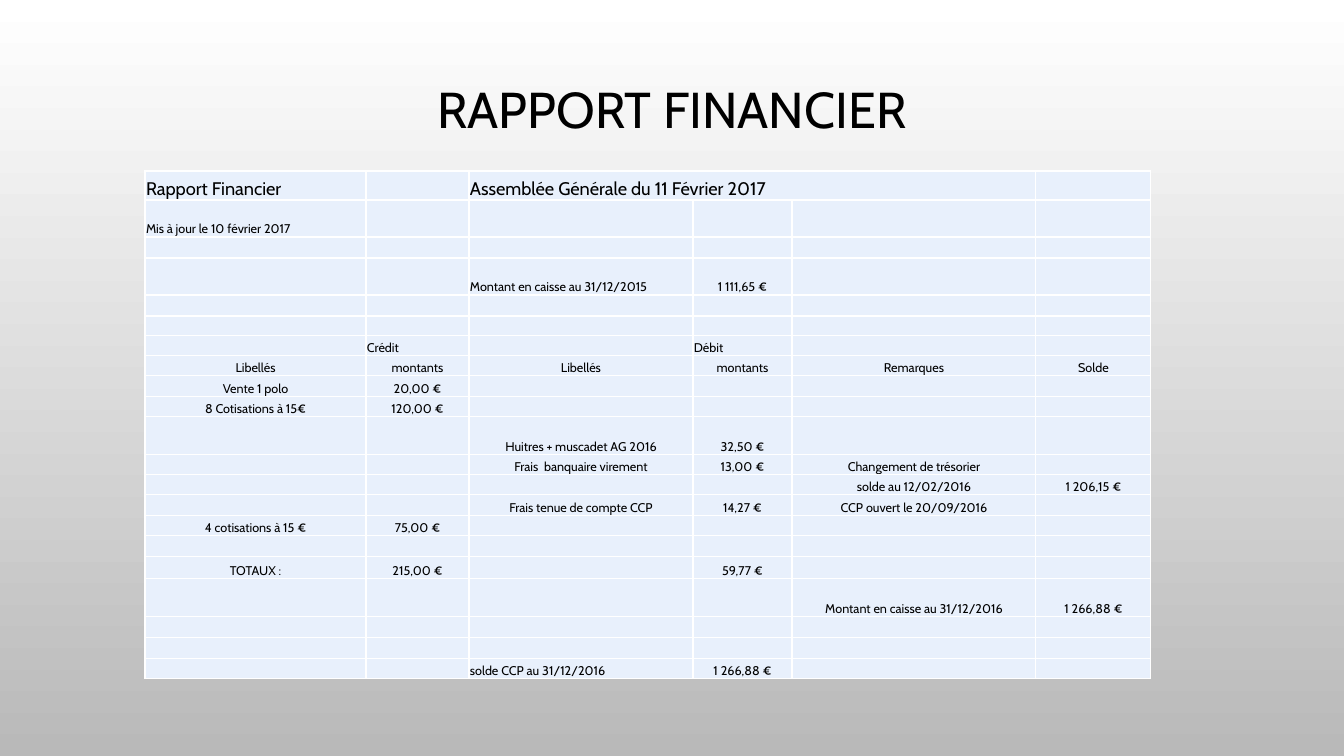
"""Build the financial report slide."""
from lxml import etree
from pptx import Presentation
from pptx.dml.color import RGBColor
from pptx.enum.text import MSO_ANCHOR, PP_ALIGN
from pptx.oxml.ns import qn
from pptx.util import Pt

LEFT, CENTER = PP_ALIGN.LEFT, PP_ALIGN.CENTER
MIDDLE, BOTTOM = MSO_ANCHOR.MIDDLE, MSO_ANCHOR.BOTTOM
SCALE = 12192000 / 1344
FONT = "Cabin"
BLACK = RGBColor(0x00, 0x00, 0x00)
WHITE = RGBColor(0xFF, 0xFF, 0xFF)
GRAY = RGBColor(0xB9, 0xB9, 0xB9)
PALE_BLUE = RGBColor(0xE8, 0xF0, 0xFC)

COLUMN_WIDTHS = [221, 103, 224, 99, 244, 115]
ROW_HEIGHTS = [29, 37, 21, 37, 21, 20, 20, 20, 21, 20, 38,
               20, 20, 21, 20, 21, 22, 38, 21, 21, 20]
LEFT_ROWS = {0, 1, 3, 6, 20}
REPORT = {
    0: ["Rapport Financier", "", "Assemblée Générale du 11 Février 2017"],
    1: ["Mis à jour le 10 février 2017"],
    3: ["", "", "Montant en caisse au 31/12/2015", "1 111,65 €"],
    6: ["", "Crédit", "", "Débit"],
    7: ["Libellés", "montants", "Libellés", "montants", "Remarques", "Solde"],
    8: ["Vente 1 polo", "20,00 €"],
    9: ["8 Cotisations à 15€", "120,00 €"],
    10: ["", "", "Huitres + muscadet AG 2016", "32,50 €"],
    11: ["", "", "Frais  banquaire virement", "13,00 €", "Changement de trésorier"],
    12: ["", "", "", "", "solde au 12/02/2016", "1 206,15 €"],
    13: ["", "", "Frais tenue de compte CCP", "14,27 €", "CCP ouvert le 20/09/2016"],
    14: ["4 cotisations à 15 €", "75,00 €"],
    16: ["TOTAUX :", "215,00 €", "", "59,77 €"],
    17: ["", "", "", "", "Montant en caisse au 31/12/2016", "1 266,88 €"],
    20: ["", "", "solde CCP au 31/12/2016", "1 266,88 €"],
}


def px(length):
    """Turn pixels into EMU."""
    return round(length * SCALE)


def set_values(target, values):
    """Set each attribute in values on the target."""
    for name, value in values.items():
        setattr(target, name, value)


def write_text(paragraph, text, size, alignment):
    """Write one run, or fix the line height of an empty paragraph."""
    paragraph.alignment = alignment
    if not text:
        end = etree.SubElement(paragraph._p, qn("a:endParaRPr"))
        end.set("sz", str(size * 100))
        etree.SubElement(end, qn("a:latin")).set("typeface", FONT)
        return
    run = paragraph.add_run()
    run.text = text
    set_values(run.font, {"name": FONT, "size": Pt(size)})
    run.font.color.rgb = BLACK


def paint_background(slide):
    """Fill the slide with a gradient from top to bottom."""
    fill = slide.background.fill
    fill.gradient()
    fill.gradient_angle = 270
    for stop, color in zip(fill.gradient_stops, (WHITE, GRAY)):
        stop.color.rgb = color


def add_title(slide, text):
    """Add the centred slide title."""
    box = slide.shapes.add_textbox(px(101), px(69), px(1142), px(87))
    frame = box.text_frame
    set_values(frame, {"word_wrap": True, "vertical_anchor": MIDDLE})
    paragraph = frame.paragraphs[0]
    paragraph.line_spacing = 0.9
    write_text(paragraph, text, 36, CENTER)


def add_borders(cell):
    """Draw a thin white line on each side of a cell."""
    properties = cell._tc.get_or_add_tcPr()
    for position, side in enumerate(("lnL", "lnR", "lnT", "lnB")):
        line = etree.Element(qn(f"a:{side}"), w=str(Pt(1)))
        fill = etree.SubElement(line, qn("a:solidFill"))
        etree.SubElement(fill, qn("a:srgbClr")).set("val", str(WHITE))
        properties.insert(position, line)


def format_cell(cell, text, size, alignment):
    """Give a cell its text, fill, margins and borders."""
    set_values(cell, {"margin_left": px(1), "margin_right": px(1),
                      "margin_top": px(1), "margin_bottom": 0,
                      "vertical_anchor": BOTTOM})
    cell.fill.solid()
    cell.fill.fore_color.rgb = PALE_BLUE
    add_borders(cell)
    write_text(cell.text_frame.paragraphs[0], text, size, alignment)


def add_report_table(slide):
    """Add the table of credits, debits and balances."""
    frame = slide.shapes.add_table(
        len(ROW_HEIGHTS), len(COLUMN_WIDTHS), px(145), px(171),
        px(sum(COLUMN_WIDTHS)), px(sum(ROW_HEIGHTS)))
    table = frame.table
    set_values(table, {"first_row": False, "horz_banding": False})
    for column, width in zip(table.columns, COLUMN_WIDTHS):
        column.width = px(width)
    for row_index, height in enumerate(ROW_HEIGHTS):
        table.rows[row_index].height = px(height)
        texts = dict(enumerate(REPORT.get(row_index, [])))
        size = 9 if row_index else 13
        for column_index in range(len(COLUMN_WIDTHS)):
            text = texts.get(column_index, "")
            is_left = row_index in LEFT_ROWS and not text.endswith("€")
            format_cell(table.cell(row_index, column_index), text, size,
                        LEFT if is_left else CENTER)
    table.cell(0, 2).merge(table.cell(0, 4))


def main():
    """Build and save the presentation."""
    presentation = Presentation()
    set_values(presentation, {"slide_width": px(1344), "slide_height": px(756)})
    slide = presentation.slides.add_slide(presentation.slide_layouts[6])
    paint_background(slide)
    add_title(slide, "RAPPORT FINANCIER")
    add_report_table(slide)
    presentation.save("out.pptx")


if __name__ == "__main__":
    main()
